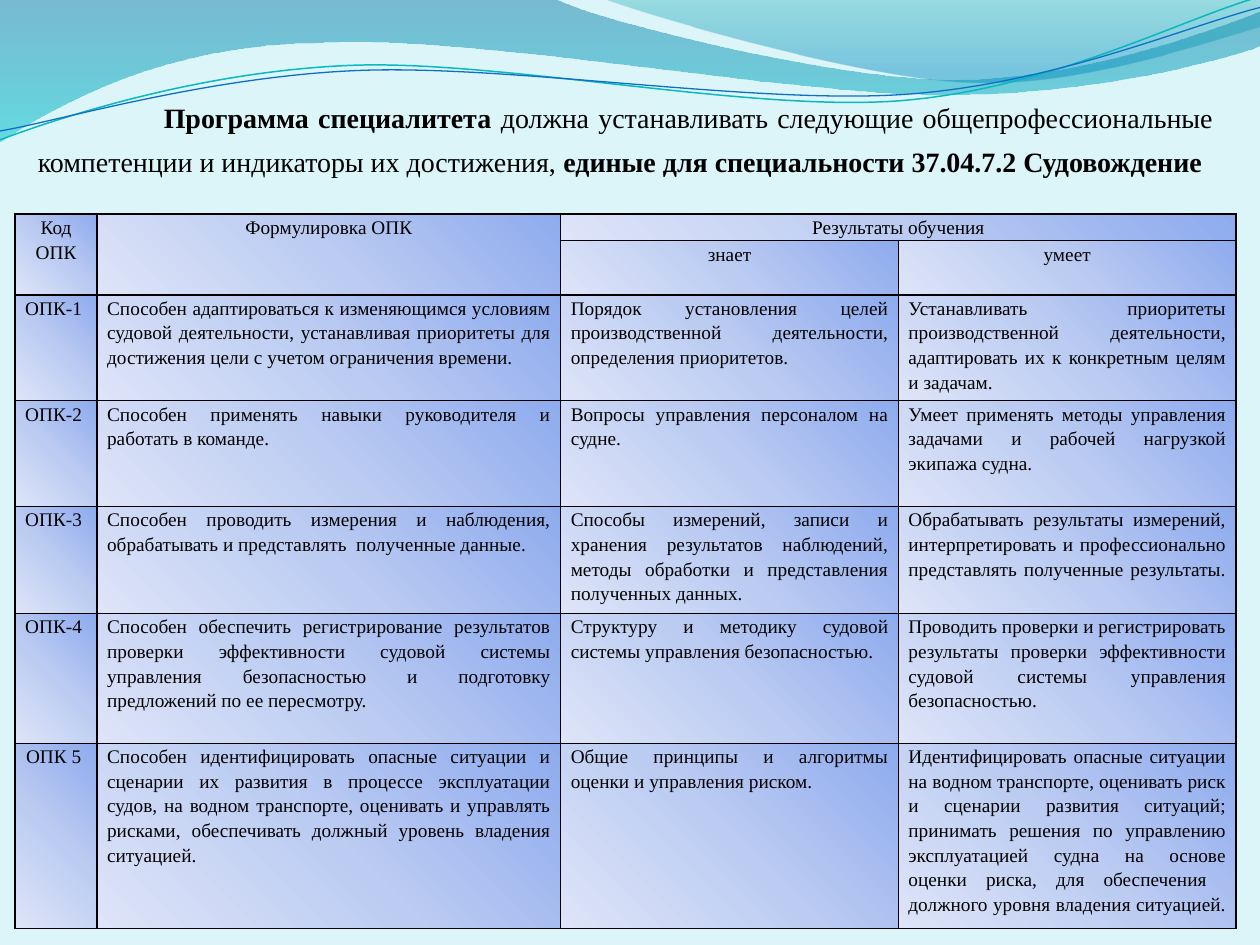
import math

import lxml.etree
import pptx
import pptx.dml.color
import pptx.enum.text
import pptx.oxml
import pptx.oxml.ns
import pptx.util

Inches = pptx.util.Inches
Pt = pptx.util.Pt
Align = pptx.enum.text.PP_ALIGN
Anchor = pptx.enum.text.MSO_ANCHOR
qn = pptx.oxml.ns.qn

FONT = "Times New Roman"
UNITS = 1000  # freeform units per inch
TILT = 2.7  # degrees, anticlockwise turn of the thin lines
CELL_STOPS = [(0, "8EABEE", 100), (50, "BBCBF2", 100), (100, "DEE5F8", 100)]

# Each wave: start, then Bézier segments (three points) or lines (one point).
BANDS = [
    ((0, -0.01), [
        [(4.4, -0.01)],
        [(4.76, 0.17), (6.64, 0.63), (7.58, 0.63)],
        [(8.53, 0.63), (9.58, 0.26), (10, 0.09)],
        [(10.01, 0.36)],
        [(9.83, 0.44), (8.7, 0.76), (7.46, 0.75)],
        [(6.22, 0.75), (3.82, 0.28), (2.57, 0.34)],
        [(1.29, 0.35), (0.46, 0.83), (-0.01, 1.13)],
    ], [(0, "0074A1", 45), (100, "00C6CF", 55)]),
    ((4.79, -0.01), [
        [(5.09, 0.11), (6.82, 0.62), (7.69, 0.65)],
        [(8.56, 0.69), (9.61, 0.32), (10, 0.21)],
        [(10, 0)],
    ], [(0, "00A1A9", 30), (80, "008BBF", 45)]),
]
LINES = [
    ((0, 1.11), [
        [(0.48, 0.93), (1.58, 0.57), (2.77, 0.52)],
        [(3.95, 0.47), (5.93, 0.89), (7.13, 0.8)],
        [(8.33, 0.71), (9.38, 0.15), (9.98, -0.02)],
    ], (4.99, 0.58), "0AB8BF", 0.85),
    ((0, 1.04), [
        [(0.47, 0.96), (1.64, 0.61), (2.83, 0.56)],
        [(4.03, 0.51), (5.97, 0.83), (7.17, 0.75)],
        [(8.36, 0.67), (9.41, 0.21), (10, 0.06)],
    ], (5, 0.59), "0F6FC6", 0.75),
]

TITLE = [
    ("Программа специалитета ", True),
    ("должна устанавливать следующие общепрофессиональные компетенции "
     "и индикаторы их достижения, ", False),
    ("единые для специальности 37.04.7.2 Судовождение", True),
]
COLS = [0.65, 3.68, 2.68, 2.68]
HEIGHTS = [0.21, 0.43, 0.84, 0.84, 0.85, 1.03, 1.47]
ROWS = [
    ["Код\nОПК", "Формулировка ОПК", "Результаты обучения", ""],
    ["", "", "знает", "умеет"],
    ["ОПК-1 ",
     "Способен адаптироваться к изменяющимся условиям судовой деятельности, устанавливая приоритеты для достижения цели с учетом ограничения времени. ",
     "Порядок установления целей производственной деятельности, определения приоритетов. ",
     "Устанавливать приоритеты производственной деятельности, адаптировать их к конкретным целям и задачам. "],
    ["ОПК-2 ",
     "Способен применять навыки руководителя и работать в команде. ",
     "Вопросы управления персоналом на судне. ",
     "Умеет применять методы управления задачами и рабочей нагрузкой экипажа судна. "],
    ["ОПК-3 ",
     "Способен проводить измерения и наблюдения, обрабатывать и представлять  полученные данные. ",
     "Способы измерений, записи и хранения результатов наблюдений, методы обработки и представления полученных данных. ",
     "Обрабатывать результаты измерений, интерпретировать и профессионально представлять полученные результаты. "],
    ["ОПК-4 ",
     "Способен обеспечить регистрирование результатов проверки эффективности судовой системы управления безопасностью и подготовку предложений по ее пересмотру. ",
     "Структуру и методику судовой системы управления безопасностью. ",
     "Проводить проверки и регистрировать результаты проверки эффективности судовой системы управления безопасностью. "],
    ["ОПК 5 ",
     "Способен идентифицировать опасные ситуации и сценарии их развития в процессе эксплуатации судов, на водном транспорте, оценивать и управлять рисками, обеспечивать должный уровень владения ситуацией. ",
     "Общие принципы и алгоритмы оценки и управления риском. ",
     "Идентифицировать опасные ситуации на водном транспорте, оценивать риск и сценарии развития ситуаций; принимать решения по управлению эксплуатацией судна на основе оценки риска, для обеспечения  должного уровня владения ситуацией. "],
]


def color(text):
    return pptx.dml.color.RGBColor.from_string(text)


def shade(item, parent, stops, angle):
    """Give a shape or cell a linear gradient with opacity in percent."""
    item.fill.solid()
    old = parent.find(qn("a:solidFill"))
    grad = parent.makeelement(qn("a:gradFill"), {"rotWithShape": "1"})
    group = lxml.etree.SubElement(grad, qn("a:gsLst"))
    for place, tone, alpha in stops:
        stop = lxml.etree.SubElement(group, qn("a:gs"), pos=str(place * 1000))
        rgb = lxml.etree.SubElement(stop, qn("a:srgbClr"), val=tone)
        if alpha < 100:
            lxml.etree.SubElement(rgb, qn("a:alpha"), val=str(alpha * 1000))
    lxml.etree.SubElement(grad, qn("a:lin"), ang=str(angle * 60000), scaled="0")
    parent.replace(old, grad)


def turn(point, centre):
    """Turn a point clockwise by TILT, so that the shape can be tilted back."""
    angle = math.radians(TILT)
    x, y = point[0] - centre[0], point[1] - centre[1]
    return (centre[0] + x * math.cos(angle) - y * math.sin(angle),
            centre[1] + x * math.sin(angle) + y * math.cos(angle))


def add_curve(slide, left, top, start, parts, close):
    """Draw a freeform, then join each three-point part into a Bézier curve."""
    points = [(round(x * UNITS), round(y * UNITS))
              for x, y in [start, *(p for part in parts for p in part)]]
    pen = slide.shapes.build_freeform(*points[0], scale=Inches(1) / UNITS)
    pen.add_line_segments(points[1:], close=close)
    shape = pen.convert_to_shape(left, top)
    shape.shadow.inherit = False
    steps = iter(list(shape._element.iter(qn("a:lnTo"))))
    for part in parts:
        group = [next(steps) for _ in part]
        if len(group) == 3:
            curve = group[0].makeelement(qn("a:cubicBezTo"), {})
            group[0].addprevious(curve)
            for step in group:
                curve.append(step[0])
                step.getparent().remove(step)
    return shape


def add_waves(slide, left, top):
    for start, parts, stops in BANDS:
        band = add_curve(slide, left, top, start, parts, True)
        shade(band, band._element.spPr, stops, 90)
        band.line.fill.background()
    for start, parts, centre, tone, width in LINES:
        flat = [[turn(p, centre) for p in part] for part in parts]
        line = add_curve(slide, left, top, turn(start, centre), flat, False)
        line.rotation = 360 - TILT
        line.fill.background()
        line.line.color.rgb = color(tone)
        line.line.width = Pt(width)


def style(para, size, align, spacing):
    para.alignment = align
    para.line_spacing = spacing
    for run in para.runs:
        run.font.name = FONT
        run.font.size = Pt(size)
        run.font.color.rgb = color("000000")


def set_title(slide, left, top, width, height):
    title = slide.shapes.title
    title.left, title.top, title.width, title.height = left, top, width, height
    slide.shapes._spTree.append(title._element)
    frame = title.text_frame
    frame.word_wrap = True
    frame.auto_size = pptx.enum.text.MSO_AUTO_SIZE.NONE
    frame.vertical_anchor = Anchor.TOP
    frame.margin_top = Inches(0.28)
    para = frame.paragraphs[0]
    for text, bold in TITLE:
        run = para.add_run()
        run.text = text
        run.font.bold = bold
    style(para, 16, Align.JUSTIFY, 1.3)
    props = para._p.get_or_add_pPr()
    props.set("marL", "0")
    props.set("indent", str(Inches(1)))


def set_cell(cell, text, centred):
    cell.text_frame.text = text
    cell.margin_left = cell.margin_right = Inches(0 if centred else 0.08)
    cell.margin_top = cell.margin_bottom = 0
    for para in cell.text_frame.paragraphs:
        style(para, 11, Align.CENTER if centred else Align.JUSTIFY, 1.15)
    props = cell._tc.get_or_add_tcPr()
    shade(cell, props, CELL_STOPS, 135)
    for place, side in enumerate(("lnL", "lnR", "lnT", "lnB")):
        edge = props.makeelement(qn("a:" + side), {"w": str(Pt(1))})
        fill = lxml.etree.SubElement(edge, qn("a:solidFill"))
        lxml.etree.SubElement(fill, qn("a:srgbClr"), val="000000")
        props.insert(place, edge)


def add_grid(slide, left, top, width, height):
    table = slide.shapes.add_table(len(ROWS), len(COLS), left, top, width, height).table
    table.first_row = table.horz_banding = False
    for col, size in zip(table.columns, COLS):
        col.width = Inches(size)
    for row, size in zip(table.rows, HEIGHTS):
        row.height = Inches(size)
    for r, texts in enumerate(ROWS):
        for c, text in enumerate(texts):
            set_cell(table.cell(r, c), text, r < 2 or c == 0)
    for first, last in (((0, 0), (1, 0)), ((0, 1), (1, 1)), ((0, 2), (0, 3))):
        table.cell(*first).merge(table.cell(*last))


def main():
    deck = pptx.Presentation()
    deck.slide_width, deck.slide_height = Inches(10), Inches(7.5)
    slide = deck.slides.add_slide(deck.slide_layouts[5])
    slide.background.fill.solid()
    slide.background.fill.fore_color.rgb = color("DBF5F9")
    add_waves(slide, 0, 0)
    set_title(slide, Inches(0.2), Inches(0.44), Inches(9.53), Inches(1.63))
    add_grid(slide, Inches(0.12), Inches(1.7), Inches(sum(COLS)), Inches(sum(HEIGHTS)))
    deck.save("out.pptx")


if __name__ == "__main__":
    main()
